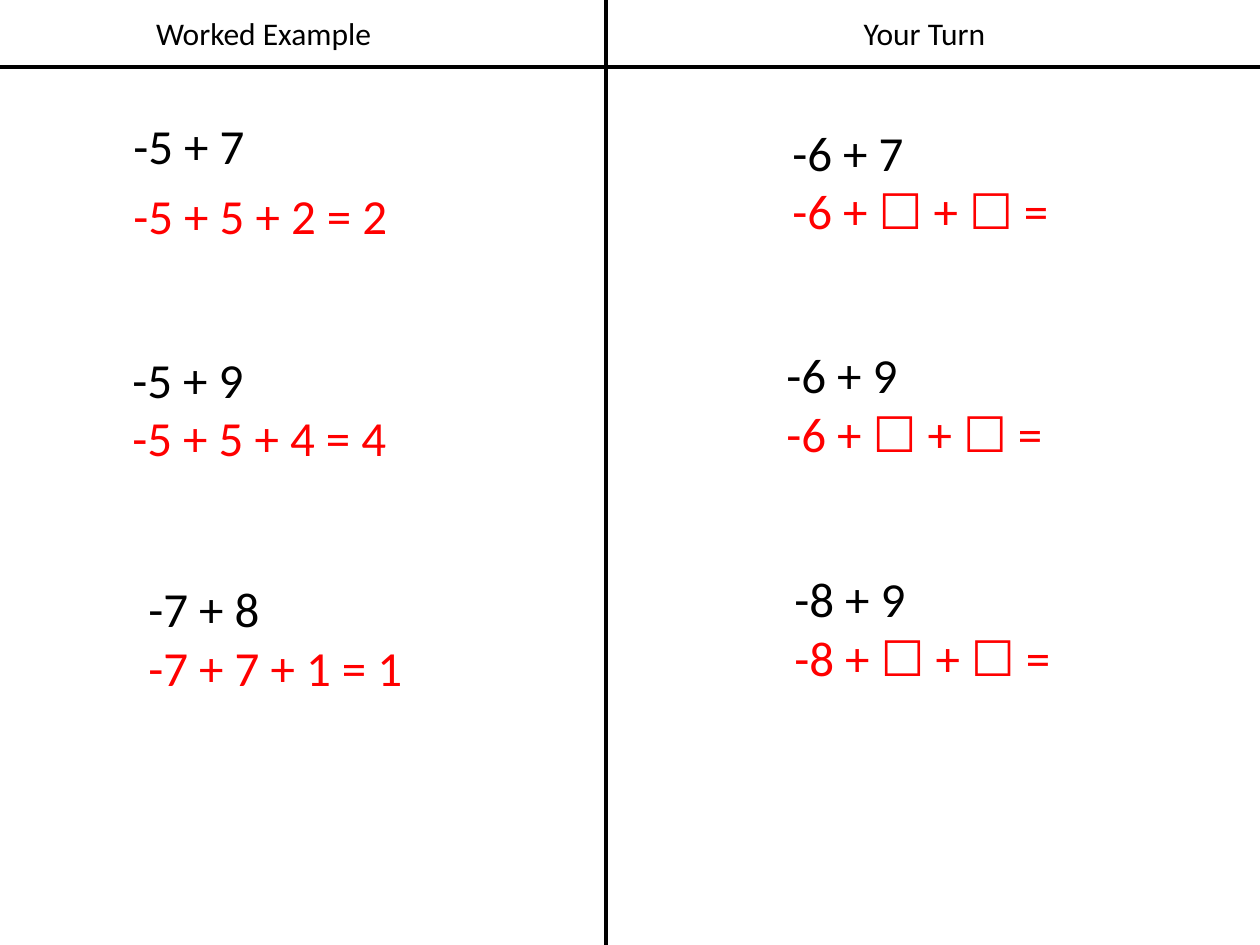
from pptx import Presentation
from pptx.dml.color import RGBColor
from pptx.enum.shapes import MSO_CONNECTOR as Conn
from pptx.enum.text import MSO_AUTO_SIZE as Auto, PP_ALIGN as Align
from pptx.oxml.ns import qn
from pptx.util import Emu, Pt
from lxml import etree

WIDTH, HEIGHT = 1260, 945
BLACK, RED = "000000", "FF0000"


def px(n):
    return Emu(round(n * 914400 / 126))


def rgb(color):
    return RGBColor.from_string(color)


class Sheet:
    """Holds the style and the current slide."""
    font = "Calibri"
    line_width = Pt(2.5)

    def __init__(self, slide):
        self.s = slide

    def text(self, lines, x, y, w, h, size=28, colors=(BLACK, RED),
             wrap=False, align=None, spacing=None, before=None):
        sp = self.s.shapes.add_textbox(px(x), px(y), px(w), px(h))
        tf = sp.text_frame
        tf.word_wrap = wrap
        tf.auto_size = Auto.SHAPE_TO_FIT_TEXT
        for i, (line, color) in enumerate(zip(lines, colors)):
            p = tf.add_paragraph() if i else tf.paragraphs[0]
            p.alignment = align
            p.line_spacing = spacing
            p.space_before = before
            r = p.add_run()
            r.text = line
            r.font.name = self.font
            r.font.size = Pt(size)
            r.font.color.rgb = rgb(color)

    def heading(self, title, x):
        self.text([title], x, 8, 243, 50, size=18, wrap=True,
                  align=Align.CENTER)

    def rule(self, x1, y1, x2, y2):
        c = self.s.shapes.add_connector(Conn.STRAIGHT, px(x1), px(y1),
                                        px(x2), px(y2))
        c.line.color.rgb = rgb(BLACK)
        c.line.width = self.line_width
        etree.SubElement(c._element.spPr, qn("a:effectLst"))


def main():
    prs = Presentation()
    prs.slide_width, prs.slide_height = px(WIDTH), px(HEIGHT)
    sheet = Sheet(prs.slides.add_slide(prs.slide_layouts[6]))

    sheet.text(["-5 + 7", "-5 + 5 + 2 = 2"], 121, 116, 295, 137,
               spacing=0.9, before=Pt(10))
    examples = [
        ("-5 + 9", "-5 + 5 + 4 = 4", 120, 343),
        ("-7 + 8", "-7 + 7 + 1 = 1", 136, 572),
    ]
    for question, answer, x, y in examples:
        sheet.text([question, answer], x, y, 295, 190)

    turns = [(-6, 7, 780, 116, 190), (-6, 9, 774, 338, 131),
             (-8, 9, 782, 562, 131)]
    for a, b, x, y, h in turns:
        sheet.text([f"{a} + {b}", f"{a} + ☐ + ☐ ="], x, y, 292, h)

    sheet.heading("Worked Example", 142)
    sheet.heading("Your Turn", 803)
    sheet.rule(606, 0, 606, HEIGHT)
    sheet.rule(0, 67, WIDTH, 67)
    prs.save("out.pptx")


if __name__ == "__main__":
    main()
